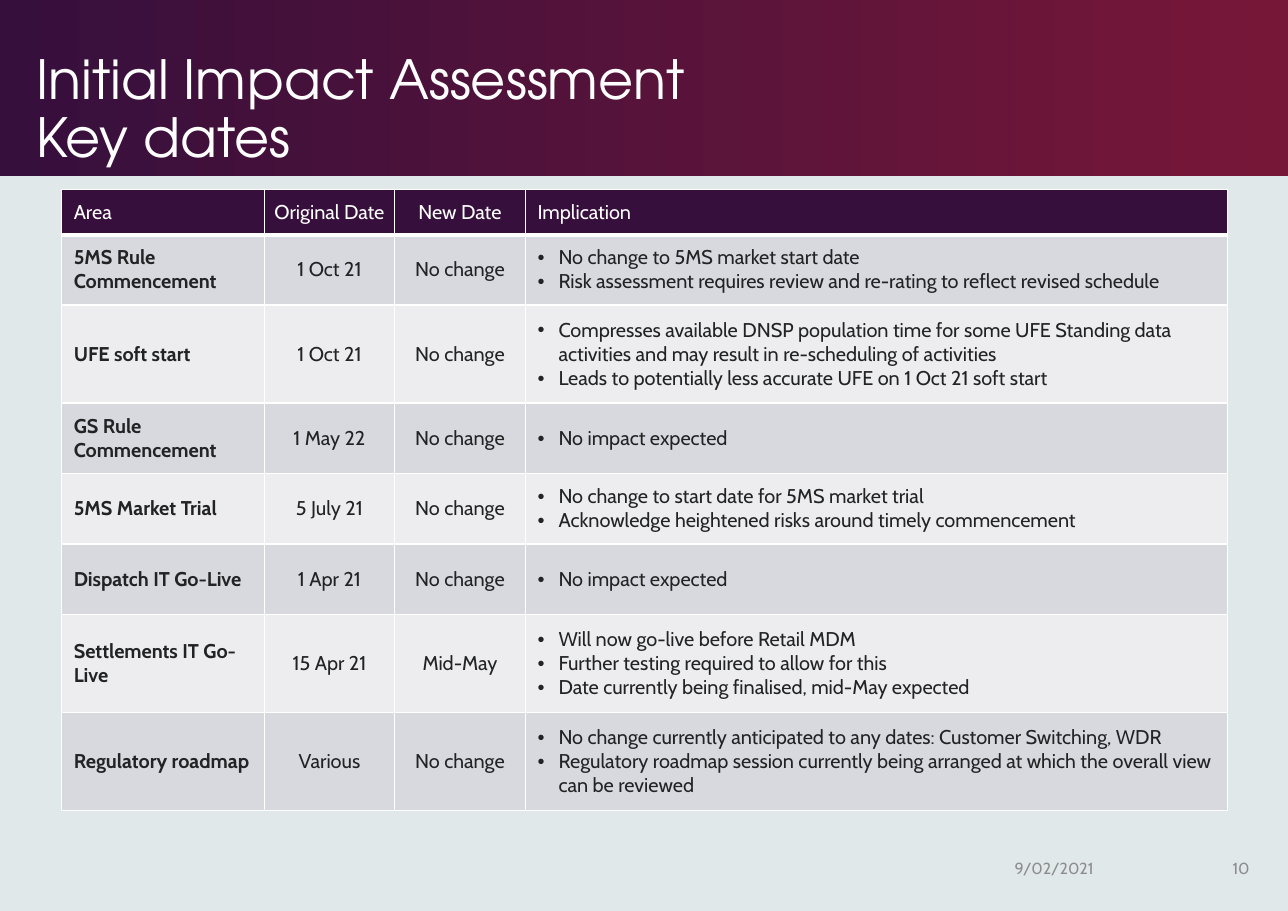
"""Build the key dates slide of the initial impact assessment."""
from lxml.etree import SubElement
from pptx import Presentation
from pptx.dml.color import RGBColor
from pptx.enum.shapes import MSO_SHAPE as Shape
from pptx.enum.text import MSO_ANCHOR as Anchor, PP_ALIGN as Align
from pptx.oxml import parse_xml
from pptx.oxml.ns import nsdecls, qn
from pptx.util import Pt

PX = 9144
PURPLE = RGBColor(0x36, 0x0F, 0x3C)
CRIMSON = RGBColor(0x77, 0x17, 0x38)
WHITE = RGBColor(0xFF, 0xFF, 0xFF)
INK = RGBColor(0x22, 0x23, 0x24)
GREY = RGBColor(0x8D, 0x8D, 0x8E)
PALE = RGBColor(0xE0, 0xE8, 0xEA)
BANDS = [RGBColor(0xED, 0xED, 0xEF), RGBColor(0xD8, 0xD9, 0xDE)]

COLUMN_WIDTHS = [184, 118, 119, 637]
ROW_HEIGHTS = [41, 64, 89, 64, 64, 64, 89, 89]
ROWS = [
    ("Area", "Original Date", "New Date", ["Implication"]),
    ("5MS Rule Commencement", "1 Oct 21", "No change", [
        "No change to 5MS market start date",
        "Risk assessment requires review and re-rating to reflect revised schedule"]),
    ("UFE soft start", "1 Oct 21", "No change", [
        "Compresses available DNSP population time for some UFE Standing data "
        "activities and may result in re-scheduling of activities",
        "Leads to potentially less accurate UFE on 1 Oct 21 soft start"]),
    ("GS Rule Commencement", "1 May 22", "No change", ["No impact expected"]),
    ("5MS Market Trial", "5 July 21", "No change", [
        "No change to start date for 5MS market trial",
        "Acknowledge heightened risks around timely commencement"]),
    ("Dispatch IT Go-Live", "1 Apr 21", "No change", ["No impact expected"]),
    ("Settlements IT Go-Live", "15 Apr 21", "Mid-May", [
        "Will now go-live before Retail MDM",
        "Further testing required to allow for this",
        "Date currently being finalised, mid-May expected"]),
    ("Regulatory roadmap", "Various", "No change", [
        "No change currently anticipated to any dates: Customer Switching, WDR",
        "Regulatory roadmap session currently being arranged at which the overall "
        "view can be reviewed"]),
]


def set_font(paragraph, name, size, color, bold=False):
    font = paragraph.font
    font.name, font.size, font.bold = name, Pt(size), bold
    font.color.rgb = color


def add_text_box(left, top, width, height, anchor):
    frame = page.shapes.add_textbox(left * PX, top * PX, width * PX, height * PX).text_frame
    frame.word_wrap = True
    frame.vertical_anchor = anchor
    return frame.paragraphs[0]


deck = Presentation()
deck.slide_width, deck.slide_height = 1169 * PX, 827 * PX
page = deck.slides.add_slide(deck.slide_layouts[6])
page.background.fill.solid()
page.background.fill.fore_color.rgb = PALE

banner = page.shapes.add_shape(Shape.RECTANGLE, 0, 0, 1169 * PX, 160 * PX)
banner.shadow.inherit = False
banner.line.fill.background()
banner.fill.gradient()
banner.fill.gradient_angle = 0
for stop, color in zip(banner.fill.gradient_stops, [PURPLE, CRIMSON]):
    stop.color.rgb = color

title = add_text_box(23, 16, 863, 143, Anchor.BOTTOM)
title.add_run().text = "Initial Impact Assessment"
title.add_line_break()
title.add_run().text = "Key dates"
title.line_spacing = 0.9
set_font(title, "TeX Gyre Adventor", 35.3, WHITE)

for text, left, width, align in [("9/02/2021", 911, 166, Align.LEFT),
                                 ("10", 1089, 55, Align.RIGHT)]:
    footer = add_text_box(left, 766, width, 44, Anchor.MIDDLE)
    footer.text = text
    footer.alignment = align
    set_font(footer, "Cabin", 10.5, GREY)

table = page.shapes.add_table(len(ROWS), len(COLUMN_WIDTHS), 56 * PX, 172 * PX,
                              sum(COLUMN_WIDTHS) * PX, sum(ROW_HEIGHTS) * PX).table
for column, width in zip(table.columns, COLUMN_WIDTHS):
    column.width = width * PX
for row, height in zip(table.rows, ROW_HEIGHTS):
    row.height = height * PX

for row_index, (area, old_date, new_date, implications) in enumerate(ROWS):
    header = row_index == 0
    for column_index, lines in enumerate([[area], [old_date], [new_date], implications]):
        cell = table.cell(row_index, column_index)
        cell.vertical_anchor = Anchor.MIDDLE
        tight = column_index == (1 if header else 2)
        cell.margin_left = cell.margin_right = (4 if tight else 11) * PX
        cell.margin_top = cell.margin_bottom = (4 if tight and not header else 6) * PX
        properties = cell._tc.get_or_add_tcPr()
        for side in "LRTB":
            points = 3 if header and side == "B" else 1
            properties.append(parse_xml(
                f'<a:ln{side} {nsdecls("a")} w="{Pt(points)}"><a:solidFill>'
                f'<a:srgbClr val="{WHITE}"/></a:solidFill></a:ln{side}>'))
        cell.fill.solid()
        cell.fill.fore_color.rgb = PURPLE if header else BANDS[row_index % 2]
        frame = cell.text_frame
        for line_index, line in enumerate(lines):
            para = frame.add_paragraph() if line_index else frame.paragraphs[0]
            para.text = line
            if column_index in (1, 2):
                para.alignment = Align.CENTER
            if column_index == 3 and not header:
                bullet = para._p.get_or_add_pPr()
                bullet.set("marL", str(19 * PX))
                bullet.set("indent", str(-19 * PX))
                SubElement(bullet, qn("a:buFont")).set("typeface", "Arial")
                SubElement(bullet, qn("a:buChar")).set("char", "•")
            set_font(para, "Cabin", 13, WHITE if header else INK,
                     column_index == 0 and not header)

deck.save("out.pptx")
